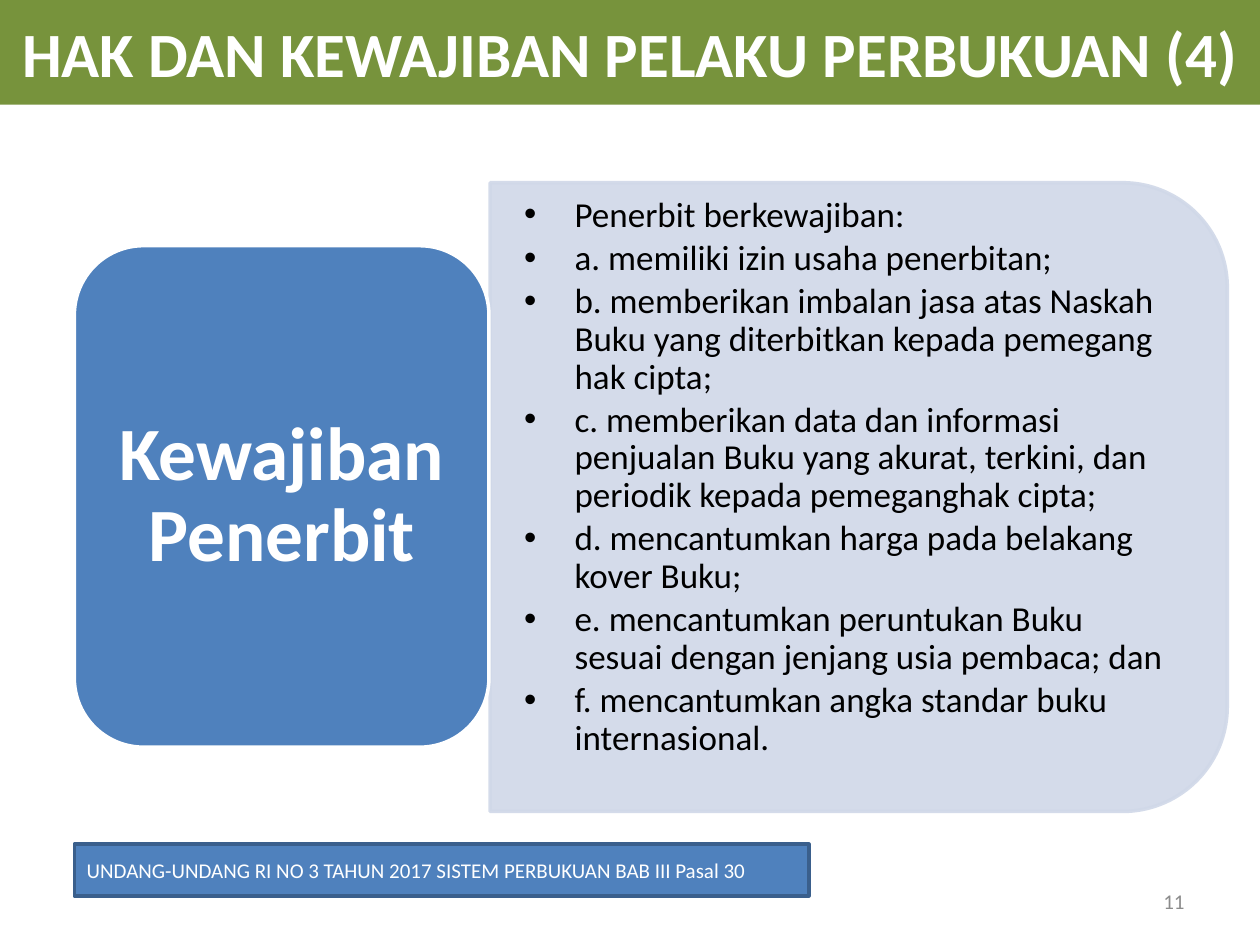
"""Build a slide on the obligations of publishers."""
from dataclasses import dataclass

from lxml.etree import SubElement
from pptx import Presentation
from pptx.dml.color import RGBColor
from pptx.enum.shapes import MSO_SHAPE
from pptx.enum.text import MSO_ANCHOR, MSO_AUTO_SIZE, PP_ALIGN
from pptx.oxml.ns import qn
from pptx.util import Inches, Pt


@dataclass(frozen=True)
class Theme:
    font: str = "Calibri"
    green: RGBColor = RGBColor(0x77, 0x93, 0x3C)
    blue: RGBColor = RGBColor(0x4F, 0x81, 0xBD)
    dark_blue: RGBColor = RGBColor(0x3A, 0x5F, 0x8C)
    pale_blue: RGBColor = RGBColor(0xD0, 0xD8, 0xE8)
    gray: RGBColor = RGBColor(0x8C, 0x8C, 0x8C)
    white: RGBColor = RGBColor(0xFF, 0xFF, 0xFF)
    black: RGBColor = RGBColor(0, 0, 0)
    title_size: int = 36
    label_size: int = 43
    body_size: int = 20
    small_size: int = 12


theme = Theme()


def add_box(shapes, kind, left, top, width, height, fill, line):
    shape = shapes.add_shape(kind, Inches(left), Inches(top), Inches(width), Inches(height))
    shape.shadow.inherit = False
    shape.fill.solid()
    shape.fill.fore_color.rgb = fill
    shape.line.color.rgb = line
    shape.line.width = Pt(2)
    return shape


def format_text(shape, size, color, alignment=PP_ALIGN.LEFT, bold=False, spacing=1.0):
    frame = shape.text_frame
    frame.word_wrap = True
    frame.auto_size = MSO_AUTO_SIZE.NONE
    frame.vertical_anchor = MSO_ANCHOR.MIDDLE
    for paragraph in frame.paragraphs:
        paragraph.alignment = alignment
        paragraph.line_spacing = spacing
        for run in paragraph.runs:
            run.font.name = theme.font
            run.font.size = Pt(size)
            run.font.bold = bold
            run.font.color.rgb = color


presentation = Presentation()
presentation.slide_width = Inches(10)
presentation.slide_height = Inches(7.5)
slide = presentation.slides.add_slide(presentation.slide_layouts[5])
shapes = slide.shapes

title = shapes.title
title.left, title.top = Inches(0), Inches(0)
title.width, title.height = Inches(10), Inches(0.83)
title.fill.solid()
title.fill.fore_color.rgb = theme.green
title.text_frame.text = "HAK DAN KEWAJIBAN PELAKU PERBUKUAN (4)"
format_text(title, theme.title_size, theme.white, PP_ALIGN.CENTER, bold=True)

panel = add_box(shapes, MSO_SHAPE.ROUND_2_SAME_RECTANGLE, 4.32, 1.02, 4.99, 5.85,
                theme.pale_blue, theme.pale_blue)
panel.rotation = 90
for color in panel.element.spPr.iter(qn("a:srgbClr")):
    SubElement(color, qn("a:alpha"), val="90000")

obligations = [
    "Penerbit berkewajiban:",
    "a. memiliki izin usaha penerbitan;",
    "b. memberikan imbalan jasa atas Naskah Buku yang diterbitkan kepada pemegang hak cipta;",
    "c. memberikan data dan informasi penjualan Buku yang akurat, terkini, dan periodik "
    "kepada pemeganghak cipta;",
    "d. mencantumkan harga pada belakang kover Buku;",
    "e. mencantumkan peruntukan Buku sesuai dengan jenjang usia pembaca; dan",
    "f. mencantumkan angka standar buku internasional.",
]
body = shapes.add_textbox(Inches(3.89), Inches(1.69), Inches(5.61), Inches(4.5))
frame = body.text_frame
frame.margin_left = frame.margin_right = Inches(0.27)
frame.margin_top = Inches(0.14)
frame.margin_bottom = Inches(0.44)
frame.text = "\n".join(obligations)
format_text(body, theme.body_size, theme.black, spacing=0.9)
for paragraph in frame.paragraphs:
    paragraph.space_after = Pt(3)
    properties = paragraph._p.get_or_add_pPr()
    properties.set("marL", str(Inches(0.4)))
    properties.set("indent", str(-Inches(0.4)))
    SubElement(properties, qn("a:buFont"), typeface="Arial")
    SubElement(properties, qn("a:buChar"), char="•")

label = add_box(shapes, MSO_SHAPE.ROUNDED_RECTANGLE, 0.59, 1.95, 3.29, 3.98,
                theme.blue, theme.white)
frame = label.text_frame
frame.margin_left = frame.margin_right = Inches(0.18)
frame.margin_top = frame.margin_bottom = Inches(0.09)
frame.text = "Kewajiban Penerbit"
format_text(label, theme.label_size, theme.white, PP_ALIGN.CENTER, bold=True, spacing=0.9)

legal_source = add_box(shapes, MSO_SHAPE.RECTANGLE, 0.59, 6.7, 5.83, 0.41,
                       theme.blue, theme.dark_blue)
legal_source.text_frame.text = "UNDANG-UNDANG RI NO 3 TAHUN 2017 SISTEM PERBUKUAN BAB III Pasal 30"
format_text(legal_source, theme.small_size, theme.white)

page_number = shapes.add_textbox(Inches(7.17), Inches(6.95), Inches(2.33), Inches(0.4))
page_number.text_frame.text = "11"
format_text(page_number, theme.small_size, theme.gray, PP_ALIGN.RIGHT)

presentation.save("out.pptx")
